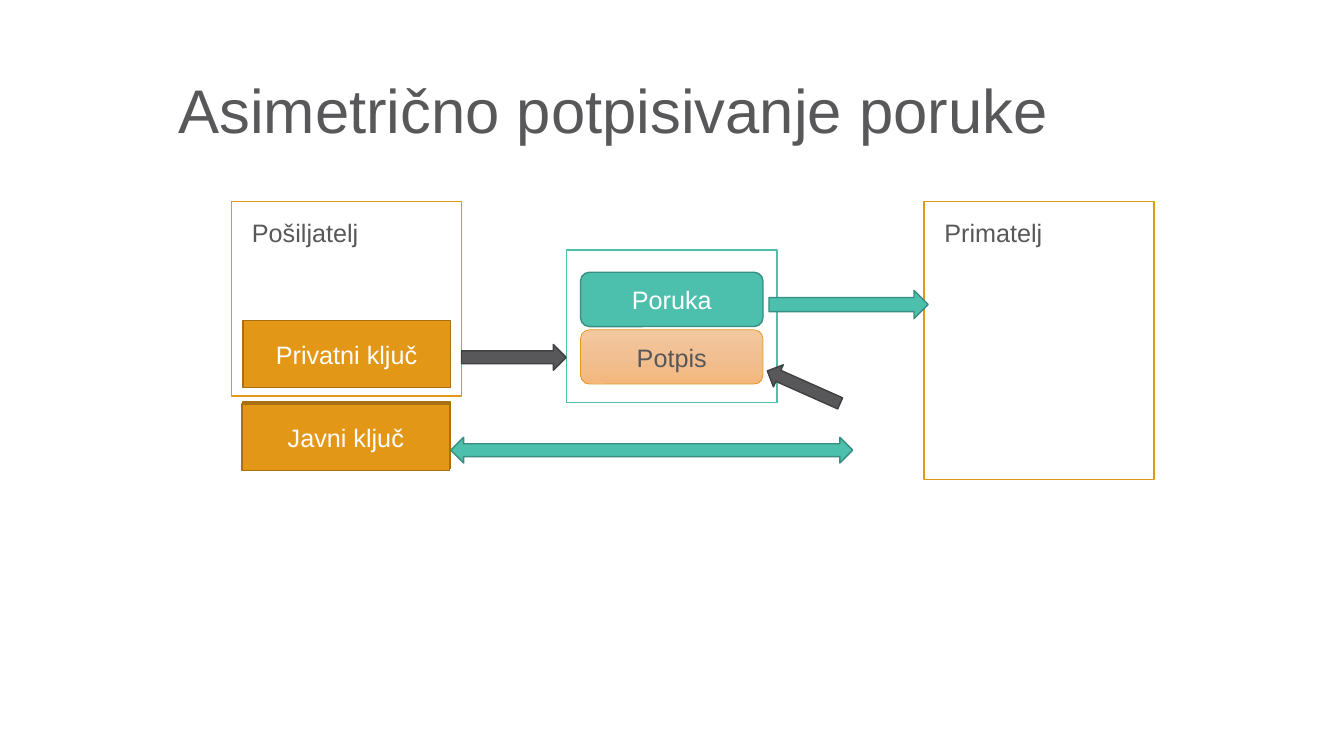
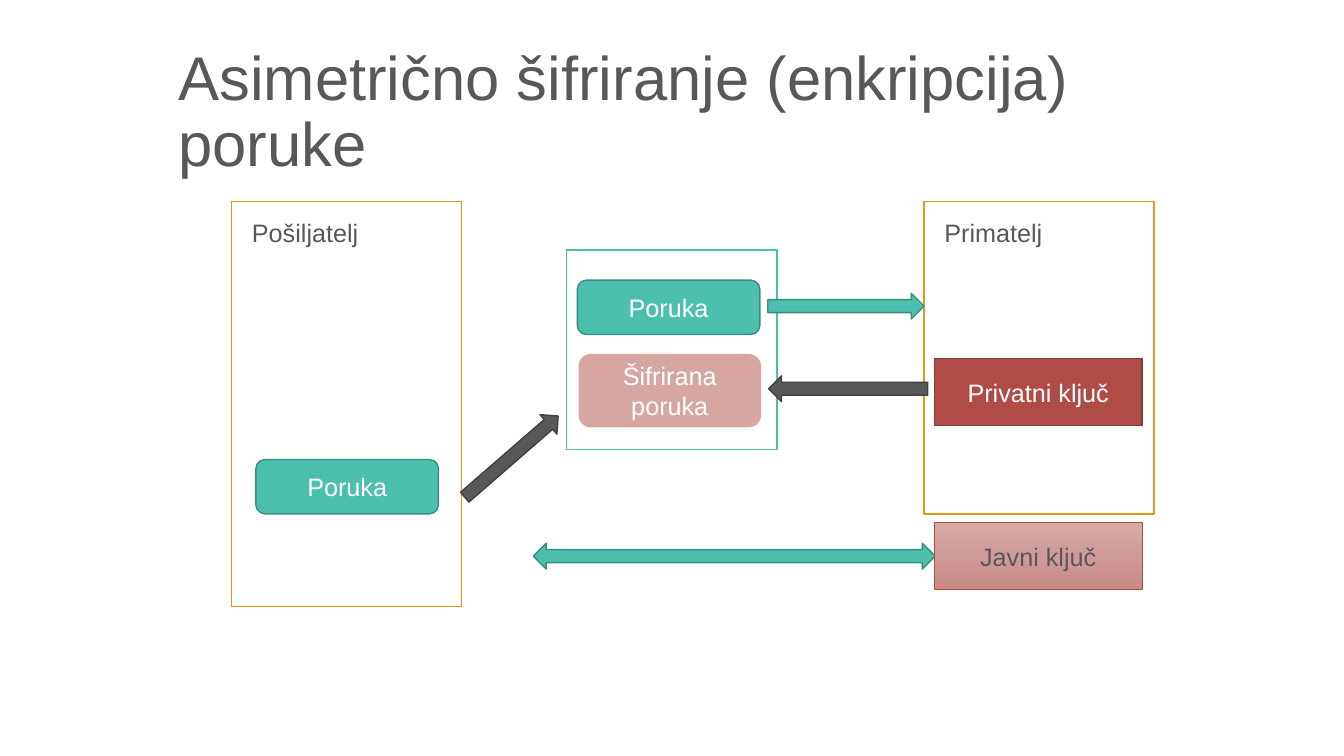
from copy import deepcopy

from lxml.etree import SubElement
from pptx import Presentation
from pptx.dml.color import RGBColor
from pptx.enum.shapes import MSO_SHAPE
from pptx.enum.text import MSO_ANCHOR, MSO_AUTO_SIZE, PP_ALIGN
from pptx.oxml.ns import qn
from pptx.util import Cm, Pt

GRAY = RGBColor(0x58, 0x58, 0x5A)
DARK_GRAY = RGBColor(0x41, 0x41, 0x43)
TEAL = RGBColor(0x4C, 0xC0, 0xAD)
DARK_TEAL = RGBColor(0x38, 0x8E, 0x80)
ORANGE = RGBColor(0xE3, 0x97, 0x17)
DARK_ORANGE = RGBColor(0xA8, 0x70, 0x11)
RED = RGBColor(0xB0, 0x4C, 0x46)
DARK_RED = RGBColor(0x82, 0x38, 0x34)
WHITE = RGBColor(0xFF, 0xFF, 0xFF)
PALE_ORANGES = (RGBColor(0xF4, 0xC8, 0x9F), RGBColor(0xF1, 0xBF, 0x91), RGBColor(0xF4, 0xB7, 0x7D))
PALE_REDS = (RGBColor(0xD6, 0xA9, 0xA7), RGBColor(0xCF, 0x9B, 0x9A), RGBColor(0xCB, 0x89, 0x87))

FONT = "Arial"
FRAME_TOP = 5.08
FRAME_WIDTH = 5.79
FRAME_INSET = 0.26
SENDER_LEFT = 5.84
RECEIVER_LEFT = 23.29
KEY_LEFT = RECEIVER_LEFT + FRAME_INSET
KEY_SIZE = (5.23, 1.68)
MESSAGE_SIZE = (4.6, 1.37)
ARROW_HEIGHT = 0.65
EXCHANGE_LENGTH = 10.13


def write_text(text_frame, text, size=18, color=GRAY, align=PP_ALIGN.LEFT,
               anchor=MSO_ANCHOR.TOP, line_spacing=None):
    text_frame.text = text
    text_frame.word_wrap = True
    text_frame.auto_size = MSO_AUTO_SIZE.NONE
    text_frame.vertical_anchor = anchor
    for paragraph in text_frame.paragraphs:
        paragraph.alignment = align
        paragraph.line_spacing = line_spacing
        paragraph.font.name = FONT
        paragraph.font.size = Pt(size)
        paragraph.font.color.rgb = color


def fill_gradient(shape, colors):
    shape.fill.gradient()
    stop_list = shape._element.spPr.find(qn("a:gradFill")).find(qn("a:gsLst"))
    stop_list.insert(1, deepcopy(stop_list[0]))
    for stop, color, position in zip(shape.fill.gradient_stops, colors, (0, 0.5, 1)):
        stop.color.rgb = color
        stop.position = position
    shape.fill.gradient_angle = 270


def set_alpha(shape, percent):
    for color in shape._element.spPr.find(qn("a:solidFill")):
        SubElement(color, qn("a:alpha")).set("val", str(percent * 1000))


class Deck:
    def __init__(self):
        self.presentation = Presentation()
        self.presentation.slide_width = Cm(33.87)
        self.presentation.slide_height = Cm(19.05)
        self.slide = None

    def add_slide(self, title):
        self.slide = self.presentation.slides.add_slide(self.presentation.slide_layouts[5])
        shape = self.slide.shapes.title
        shape.left, shape.top, shape.width, shape.height = Cm(4.24), Cm(1.02), Cm(27.3), Cm(3.68)
        write_text(shape.text_frame, title, size=44, anchor=MSO_ANCHOR.MIDDLE, line_spacing=0.9)

    def add_shape(self, kind, left, top, width, height, fill=None, line=None, line_width=1):
        shape = self.slide.shapes.add_shape(kind, Cm(left), Cm(top), Cm(width), Cm(height))
        shape.shadow.inherit = False
        if fill is None:
            shape.fill.background()
        elif isinstance(fill, RGBColor):
            shape.fill.solid()
            shape.fill.fore_color.rgb = fill
        else:
            fill_gradient(shape, fill)
        if line is None:
            shape.line.fill.background()
        else:
            shape.line.color.rgb = line
            shape.line.width = Pt(line_width)
        return shape

    def add_box(self, kind, text, left, top, size, fill, line, color=WHITE, line_width=1):
        shape = self.add_shape(kind, left, top, *size, fill, line, line_width)
        write_text(shape.text_frame, text, color=color, align=PP_ALIGN.CENTER,
                   anchor=MSO_ANCHOR.MIDDLE)
        return shape

    def add_key(self, text, left, top, fill=ORANGE, line=DARK_ORANGE, **style):
        return self.add_box(MSO_SHAPE.RECTANGLE, text, left, top, KEY_SIZE, fill, line, **style)

    def add_message(self, text, left, top, fill=TEAL, line=DARK_TEAL, size=MESSAGE_SIZE, **style):
        return self.add_box(MSO_SHAPE.ROUNDED_RECTANGLE, text, left, top, size, fill, line, **style)

    def add_party(self, name, left, height):
        self.add_shape(MSO_SHAPE.RECTANGLE, left, FRAME_TOP, FRAME_WIDTH, height, line=ORANGE)
        label = self.slide.shapes.add_textbox(
            Cm(left + FRAME_INSET), Cm(FRAME_TOP + FRAME_INSET), Cm(KEY_SIZE[0]), Cm(1.02))
        write_text(label.text_frame, name)

    def add_frames(self, sender_height, envelope_height, receiver_height):
        self.add_party("Pošiljatelj", SENDER_LEFT, sender_height)
        self.add_party("Primatelj", RECEIVER_LEFT, receiver_height)
        self.add_shape(MSO_SHAPE.RECTANGLE, 14.27, 6.3, 5.31, envelope_height, line=TEAL)

    def add_key_arrow(self, left, top, length, rotation=0, height=ARROW_HEIGHT):
        shape = self.add_shape(MSO_SHAPE.RIGHT_ARROW, left, top, length, height, GRAY, DARK_GRAY)
        shape.rotation = rotation

    def add_delivery_arrow(self, left, top, length, height=ARROW_HEIGHT):
        self.add_shape(MSO_SHAPE.RIGHT_ARROW, left, top, length, height, TEAL, DARK_TEAL)

    def add_exchange_arrow(self, left, top):
        self.add_shape(MSO_SHAPE.LEFT_RIGHT_ARROW, left, top, EXCHANGE_LENGTH, ARROW_HEIGHT,
                       TEAL, DARK_TEAL)


def add_signing_slide(deck):
    deck.add_slide("Asimetrično potpisivanje poruke")
    deck.add_frames(sender_height=4.9, envelope_height=3.84, receiver_height=7.01)
    deck.add_message("Poruka", 14.63, 6.86)
    deck.add_message("Potpis", 14.63, 8.31, PALE_ORANGES, ORANGE, color=GRAY, line_width=0.5)
    deck.add_key("Privatni ključ", 6.12, 8.08)
    deck.add_shape(MSO_SHAPE.RECTANGLE, 6.12, 10.13, *KEY_SIZE, ORANGE, DARK_ORANGE)
    deck.add_key("Javni ključ", 6.1, 10.18)
    deck.add_key_arrow(11.63, 8.68, 2.64)
    deck.add_exchange_arrow(11.36, 11.02)
    deck.add_key_arrow(19.25, 9.45, 2.01, rotation=204, height=0.61)
    deck.add_delivery_arrow(19.38, 7.32, 4.01, height=0.71)


def add_encryption_slide(deck):
    deck.add_slide("Asimetrično šifriranje (enkripcija) poruke")
    deck.add_frames(sender_height=10.21, envelope_height=5.03, receiver_height=7.87)
    deck.add_message("Poruka", 6.45, 11.58)
    deck.add_message("Poruka", 14.55, 7.06)
    encrypted = deck.add_message("Šifrirana\nporuka", 14.58, 8.92, RED, None, size=(4.6, 1.85))
    set_alpha(encrypted, 50)
    deck.add_key("Privatni ključ", KEY_LEFT, 9.04, RED, DARK_RED)
    deck.add_key_arrow(19.37, 9.47, 4.01, rotation=180)
    deck.add_exchange_arrow(13.44, 13.69)
    deck.add_key("Javni ključ", KEY_LEFT, 13.17, PALE_REDS, RED, color=GRAY, line_width=0.5)
    deck.add_key_arrow(11.33, 11.18, 3.12, rotation=319)
    deck.add_delivery_arrow(19.35, 7.39, 3.94)


def main():
    deck = Deck()
    add_signing_slide(deck)
    add_encryption_slide(deck)
    deck.presentation.save("out.pptx")


if __name__ == "__main__":
    main()
